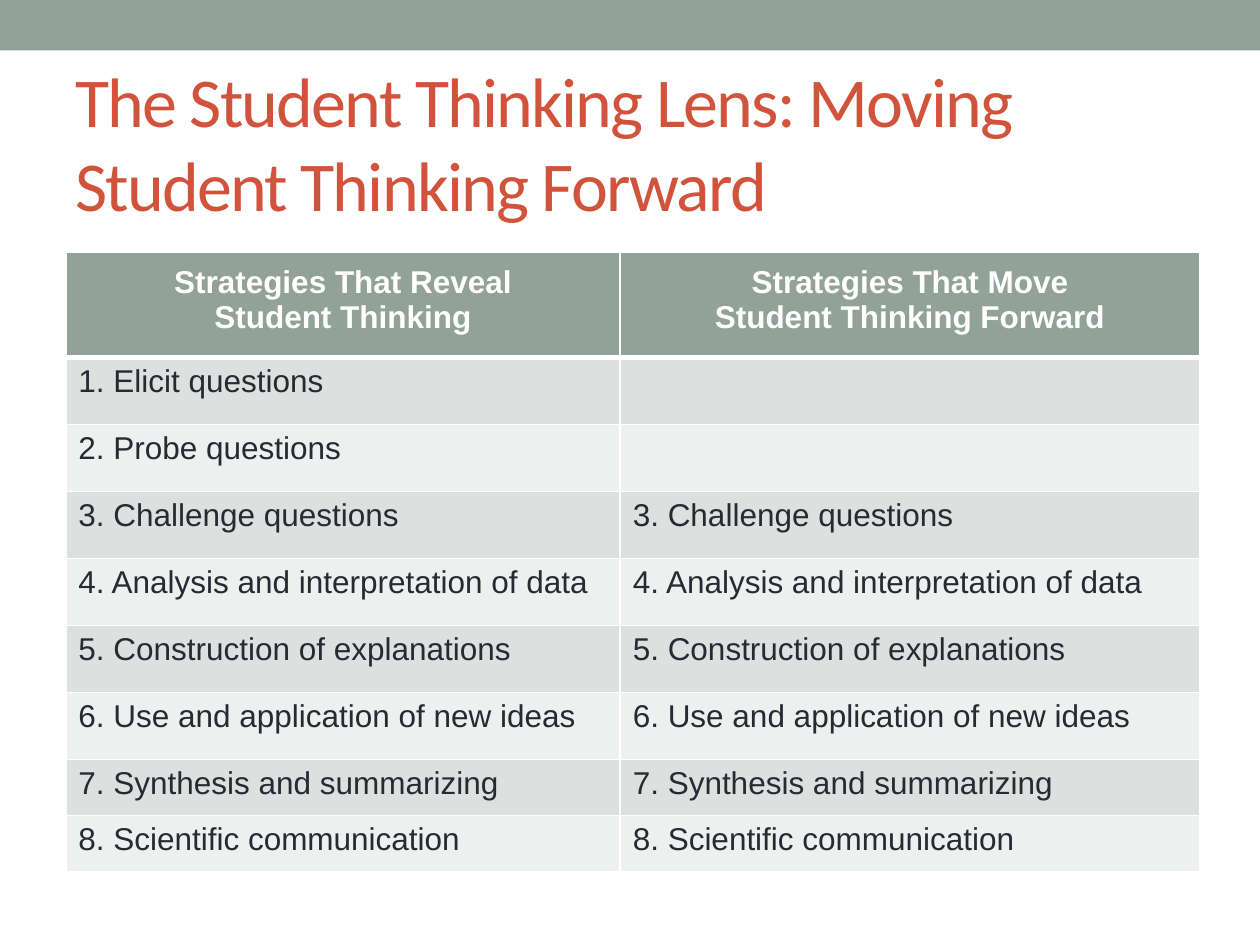
from dataclasses import dataclass

from lxml import etree
from pptx import Presentation
from pptx import util as u
from pptx.dml.color import RGBColor
from pptx.enum import shapes, text
from pptx.oxml import ns

COLOURS = {
    "sage": "93A299",
    "title": "D2533C",
    "ink": "292934",
    "white": "FFFFFF",
    "odd": "DCE0DE",
    "even": "EEF0EF",
}
COLUMN_WIDTHS = (316.8, 331.2)
ROW_HEIGHTS = (59.8,) + (38.3,) * 6 + (32,) * 2
HEADERS = (
    "Strategies That Reveal\vStudent Thinking",
    "Strategies That Move\vStudent Thinking Forward",
)
STRATEGIES = (
    "Elicit questions",
    "Probe questions",
    "Challenge questions",
    "Analysis and interpretation of data",
    "Construction of explanations",
    "Use and application of new ideas",
    "Synthesis and summarizing",
    "Scientific communication",
)
FIRST_FORWARD = 3


@dataclass
class Style:
    """Look of one kind of text."""

    font: str
    size: float
    colour: str
    bold: bool = False
    align: text.PP_ALIGN = text.PP_ALIGN.LEFT


TITLE = Style("Calibri", 40, "title")
HEADER = Style("Arial", 18, "white", True, text.PP_ALIGN.CENTER)
BODY = Style("Arial", 18, "ink")


def rgb(name: str) -> RGBColor:
    """Return the named colour."""
    return RGBColor.from_string(COLOURS[name])


def write(frame, wording: str, style: Style):
    """Fill a text frame with one styled paragraph and return it."""
    para = frame.paragraphs[0]
    para.text = wording
    para.alignment = style.align
    formats = {"name": style.font, "size": u.Pt(style.size), "bold": style.bold}
    for target in [para, *para.runs]:
        for name, value in formats.items():
            setattr(target.font, name, value)
        target.font.color.rgb = rgb(style.colour)
    return para


def add_border(cell, side: str, width: float) -> None:
    """Draw a white line on one side of a cell."""
    properties = cell._tc.get_or_add_tcPr()
    line = etree.SubElement(properties, ns.qn(f"a:ln{side}"), w=str(u.Pt(width)))
    fill = etree.SubElement(line, ns.qn("a:solidFill"))
    etree.SubElement(fill, ns.qn("a:srgbClr"), val=COLOURS["white"])


def fill_cell(cell, row: int, wording: str) -> None:
    """Give a table cell its borders, fill and text."""
    widths = {"L": 1, "R": 1, "T": 3 if row == 1 else 1, "B": 3 if row == 0 else 1}
    for side, width in widths.items():
        add_border(cell, side, width)
    cell.fill.solid()
    cell.fill.fore_color.rgb = rgb("sage" if row == 0 else "odd" if row % 2 else "even")
    if row == 0:
        cell.margin_top = u.Pt(7.1)
    write(cell.text_frame, wording, BODY if row else HEADER)


def add_band(page) -> None:
    """Draw the band across the top of the page."""
    band = page.shapes.add_shape(
        shapes.MSO_SHAPE.RECTANGLE, 0, 0, u.Pt(720), u.Pt(28.8)
    )
    band.shadow.inherit = False
    band.fill.solid()
    band.fill.fore_color.rgb = rgb("sage")
    band.line.fill.background()


def add_title(page) -> None:
    """Write the page title."""
    box = page.shapes.add_textbox(u.Pt(36), u.Pt(42), u.Pt(648), u.Pt(78))
    frame = box.text_frame
    frame.word_wrap = True
    frame.vertical_anchor = text.MSO_ANCHOR.MIDDLE
    wording = "The Student Thinking Lens: Moving Student Thinking Forward"
    para = write(frame, wording, TITLE)
    para.runs[0].font._element.set("spc", "-100")


def add_strategies(page) -> None:
    """Build the table of numbered strategies."""
    table = page.shapes.add_table(
        len(ROW_HEIGHTS), len(COLUMN_WIDTHS), u.Pt(37.6), u.Pt(144.4),
        u.Pt(sum(COLUMN_WIDTHS)), u.Pt(sum(ROW_HEIGHTS)),
    ).table
    for column, width in zip(table.columns, COLUMN_WIDTHS):
        column.width = u.Pt(width)
    for row, height in zip(table.rows, ROW_HEIGHTS):
        row.height = u.Pt(height)
    for index, wording in enumerate(HEADERS):
        fill_cell(table.cell(0, index), 0, wording)
    for number, strategy in enumerate(STRATEGIES, 1):
        label = f"{number}. {strategy}"
        fill_cell(table.cell(number, 0), number, label)
        forward = label if number >= FIRST_FORWARD else ""
        fill_cell(table.cell(number, 1), number, forward)


def main() -> None:
    """Build and save the deck."""
    deck = Presentation()
    deck.slide_width, deck.slide_height = u.Pt(720), u.Pt(540)
    page = deck.slides.add_slide(deck.slide_layouts[6])
    add_band(page)
    add_title(page)
    add_strategies(page)
    deck.save("out.pptx")


if __name__ == "__main__":
    main()
